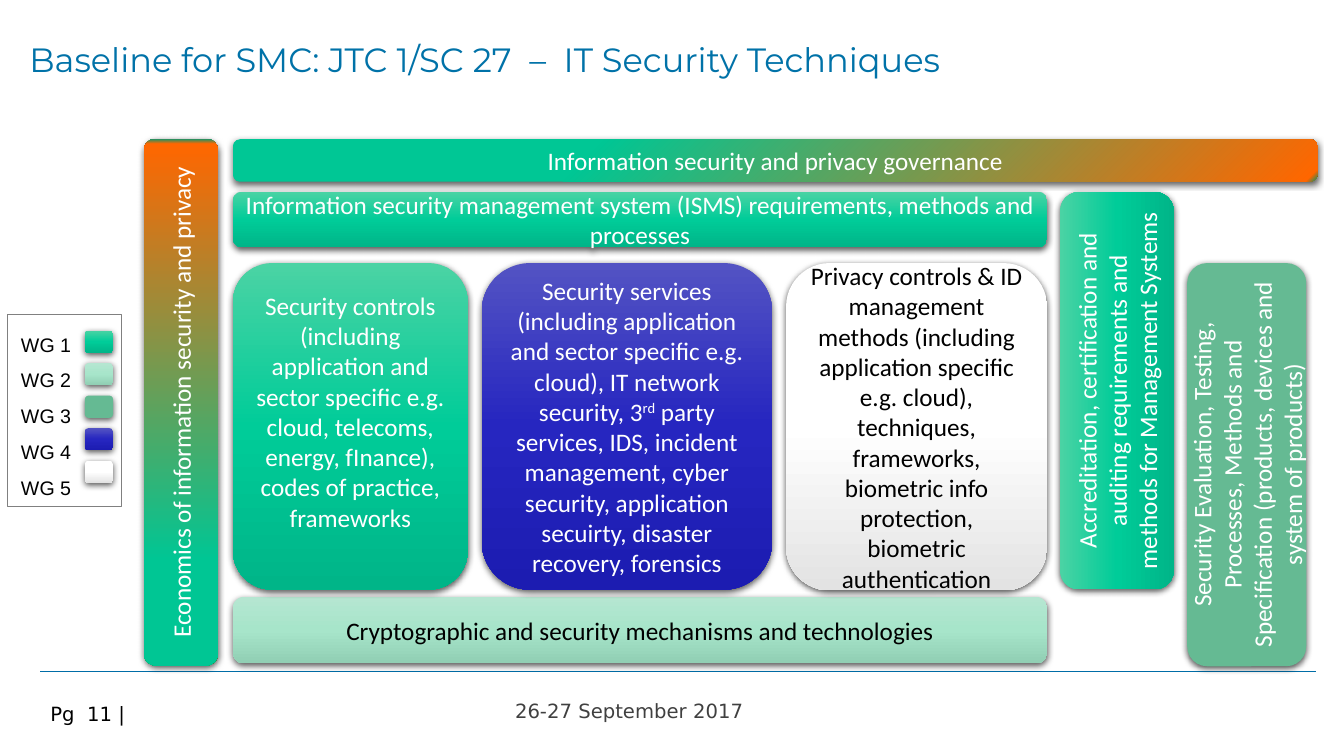
from dataclasses import dataclass

import lxml.etree
import pptx
import pptx.dml.color
import pptx.enum.shapes
import pptx.enum.text
import pptx.oxml.ns
import pptx.util

Cm, Pt = pptx.util.Cm, pptx.util.Pt
RGB = pptx.dml.color.RGBColor.from_string
ALIGN = pptx.enum.text.PP_ALIGN
ANCHOR = pptx.enum.text.MSO_ANCHOR
FIT = pptx.enum.text.MSO_AUTO_SIZE
SHAPE = pptx.enum.shapes.MSO_SHAPE
qn = pptx.oxml.ns.qn


@dataclass(frozen=True)
class Theme:
    heading: str = "0072A8"
    rule: str = "006DA7"
    date: str = "404040"
    frame: str = "808080"
    dark: str = "000000"
    light: str = "FFFFFF"
    title_size: int = 24
    block_size: int = 18
    small_size: int = 14
    # Fills: (position in percent, colour) stops, then angle; None is radial
    wg1: tuple = (((0, "4BD3A4"), (50, "00CC99"), (100, "00B588")), 90)
    wg2: tuple = (((0, "B5E6D1"), (50, "A7E5CA"), (100, "91CFB4")), 90)
    wg3: tuple = (((0, "65BA93"),), 0)
    wg4: tuple = (((0, "5353C3"), (50, "2626C0"), (100, "1C1CB1")), 90)
    wg5: tuple = (((0, "FFFFFF"), (50, "FFFFFF"), (100, "E3E3E3")), 90)
    economics: tuple = (((0, "009872"), (1, "FF6600"), (80, "00C694"), (100, "00C795")), 180)
    governance: tuple = (((0, "009872"), (1, "FF6600"), (67, "00C694"), (100, "00C795")), None)


theme = Theme()


def write(shape, text, size=theme.block_size, color=theme.dark, font="Calibri",
          align=ALIGN.LEFT, anchor=ANCHOR.TOP, insets=(0.25, 0.13, 0.25, 0.13),
          spacing=None, fit=FIT.NONE):
    """Fill a shape with text; newlines part paragraphs, ^ encloses superscript."""
    frame = shape.text_frame
    frame.word_wrap = True
    frame.auto_size = fit
    frame.vertical_anchor = anchor
    frame.margin_left, frame.margin_top, frame.margin_right, frame.margin_bottom = map(Cm, insets)
    for index, line in enumerate(text.split("\n")):
        paragraph = frame.paragraphs[0] if index == 0 else frame.add_paragraph()
        paragraph.alignment = align
        if spacing:
            paragraph.line_spacing = spacing
        for part, words in enumerate(line.split("^")):
            run = paragraph.add_run()
            run.text = words
            run.font.size = Pt(size)
            run.font.name = font
            run.font.color.rgb = RGB(color)
            if part % 2:
                run.font._element.set("baseline", "30000")


def add_block(slide, place, fill):
    """Add a rounded block with a solid or gradient fill and a soft shadow."""
    block = slide.shapes.add_shape(SHAPE.ROUNDED_RECTANGLE, *map(Cm, place))
    block.line.fill.background()
    block.shadow.inherit = False
    properties = block.element.spPr
    stops, angle = fill
    block.fill.solid()
    block.fill.fore_color.rgb = RGB(stops[0][1])
    if len(stops) > 1:
        gradient = lxml.etree.Element(qn("a:gradFill"), rotWithShape="1")
        stop_list = lxml.etree.SubElement(gradient, qn("a:gsLst"))
        for position, color in stops:
            stop = lxml.etree.SubElement(stop_list, qn("a:gs"), pos=str(position * 1000))
            lxml.etree.SubElement(stop, qn("a:srgbClr"), val=color)
        if angle is None:
            radial = lxml.etree.SubElement(gradient, qn("a:path"), path="circle")
            lxml.etree.SubElement(radial, qn("a:fillToRect"), l="100000", t="100000")
        else:
            lxml.etree.SubElement(gradient, qn("a:lin"), ang=str(angle * 60000), scaled="0")
        properties.replace(properties.find(qn("a:solidFill")), gradient)
    shadow = lxml.etree.SubElement(
        properties.find(qn("a:effectLst")), qn("a:outerShdw"), blurRad=str(Pt(4.5)),
        dist=str(Pt(1.5)), dir="5400000", algn="ctr", rotWithShape="0")
    shade = lxml.etree.SubElement(shadow, qn("a:srgbClr"), val=theme.dark)
    lxml.etree.SubElement(shade, qn("a:alpha"), val="63000")
    return block


presentation = pptx.Presentation()
presentation.slide_width, presentation.slide_height = Cm(33.87), Cm(19.05)
slide = presentation.slides.add_slide(presentation.slide_layouts[5])

# Footer rule and date
rule = slide.shapes.add_connector(
    pptx.enum.shapes.MSO_CONNECTOR.STRAIGHT, Cm(1.02), Cm(16.92), Cm(33.17), Cm(16.92))
rule.line.color.rgb = RGB(theme.rule)
rule.line.width = Pt(0.75)
lxml.etree.SubElement(rule.element.spPr, qn("a:effectLst"))
date = slide.shapes.add_textbox(Cm(12.73), Cm(17.48), Cm(9.8), Cm(0.86))
write(date, "26-27 September 2017", size=theme.small_size, color=theme.date,
      font="DejaVu Sans", fit=FIT.SHAPE_TO_FIT_TEXT)

# Title
title = slide.shapes.title
title.left, title.top, title.width, title.height = Cm(0.74), Cm(0.91), Cm(29.41), Cm(1.85)
write(title, "Baseline for SMC: JTC 1/SC 27  –  IT Security Techniques",
      size=theme.title_size, color=theme.heading, font="Montserrat",
      insets=(0, 0, 0, 0), spacing=1.08)

# Subject blocks: text, place, fill, text colour, rotation
left, span, row = 5.87, 20.52, 6.63
blocks = [
    ("Information security management system (ISMS) requirements, methods and processes",
     (left, 4.83, span, 1.4), theme.wg1, theme.light, 0),
    ("Accreditation, certification and auditing requirements and methods for Management Systems",
     (23.14, 8.41, 10.01, 2.87), theme.wg1, theme.light, 270),
    ("Cryptographic and security mechanisms and technologies",
     (left, 15.04, span, 1.68), theme.wg2, theme.dark, 0),
    ("Economics of information security and privacy",
     (-2.08, 9.19, 13.28, 1.88), theme.economics, theme.light, 270),
    ("Information security and privacy governance",
     (left, 3.51, 27.33, 1.07), theme.governance, theme.light, 0),
    ("Privacy controls & ID management methods (including application specific e.g. cloud), "
     "techniques, frameworks, biometric info protection, biometric authentication",
     (19.81, row, 6.58, 8.25), theme.wg5, theme.dark, 0),
    ("Security services (including application and sector specific e.g. cloud), IT network "
     "security, 3^rd^ party services, IDS, incident management, cyber security, application "
     "secuirty, disaster recovery, forensics",
     (12.14, row, 7.32, 8.23), theme.wg4, theme.light, 0),
]
centred = dict(align=ALIGN.CENTER, anchor=ANCHOR.MIDDLE)
for text, place, fill, color, rotation in blocks:
    subject = add_block(slide, place, fill)
    subject.rotation = rotation
    write(subject, text, color=color, insets=(0.25,) * 4, **centred)

# Security controls sit slightly above the middle of their block
controls = add_block(slide, (left, row, 5.92, 8.23), theme.wg1)
write(controls, "Security controls (including application and sector specific e.g. cloud, "
      "telecoms, energy, fInance), codes of practice, frameworks",
      color=theme.light, insets=(0.25, 0.25, 0.25, 1.02), **centred)

# Evaluation block with text running upwards
evaluation = add_block(slide, (29.92, row, 3, 10.16), theme.wg3)
write(evaluation, "Security Evaluation, Testing, Processes, Methods and Specification "
      "(products, devices and system of products)",
      color=theme.light, insets=(0.25,) * 4, **centred)
evaluation.text_frame._txBody.bodyPr.set("vert", "vert270")

# Legend of working groups
legend = slide.shapes.add_shape(SHAPE.RECTANGLE, Cm(0.2), Cm(7.92), Cm(2.87), Cm(4.85))
legend.shadow.inherit = False
legend.fill.background()
legend.line.color.rgb = RGB(theme.frame)
legend.line.width = Pt(0.75)
write(legend, "\n".join(f"WG {number}" for number in range(1, 6)), size=theme.small_size,
      font="Arial", insets=(0.33, 0.15, 0.33, 0.15), spacing=Pt(25.6),
      fit=FIT.SHAPE_TO_FIT_TEXT)
group_fills = (theme.wg1, theme.wg2, theme.wg3, theme.wg4, theme.wg5)
for index, fill in enumerate(group_fills):
    add_block(slide, (2.14, 8.33 + 0.82 * index, 0.71, 0.56), fill)

# Page number
page = slide.shapes.add_textbox(Cm(1.02), Cm(17.55), Cm(7.01), Cm(0.99))
write(page, "Pg  11 |", size=theme.small_size, font="DejaVu Sans")

presentation.save("out.pptx")
